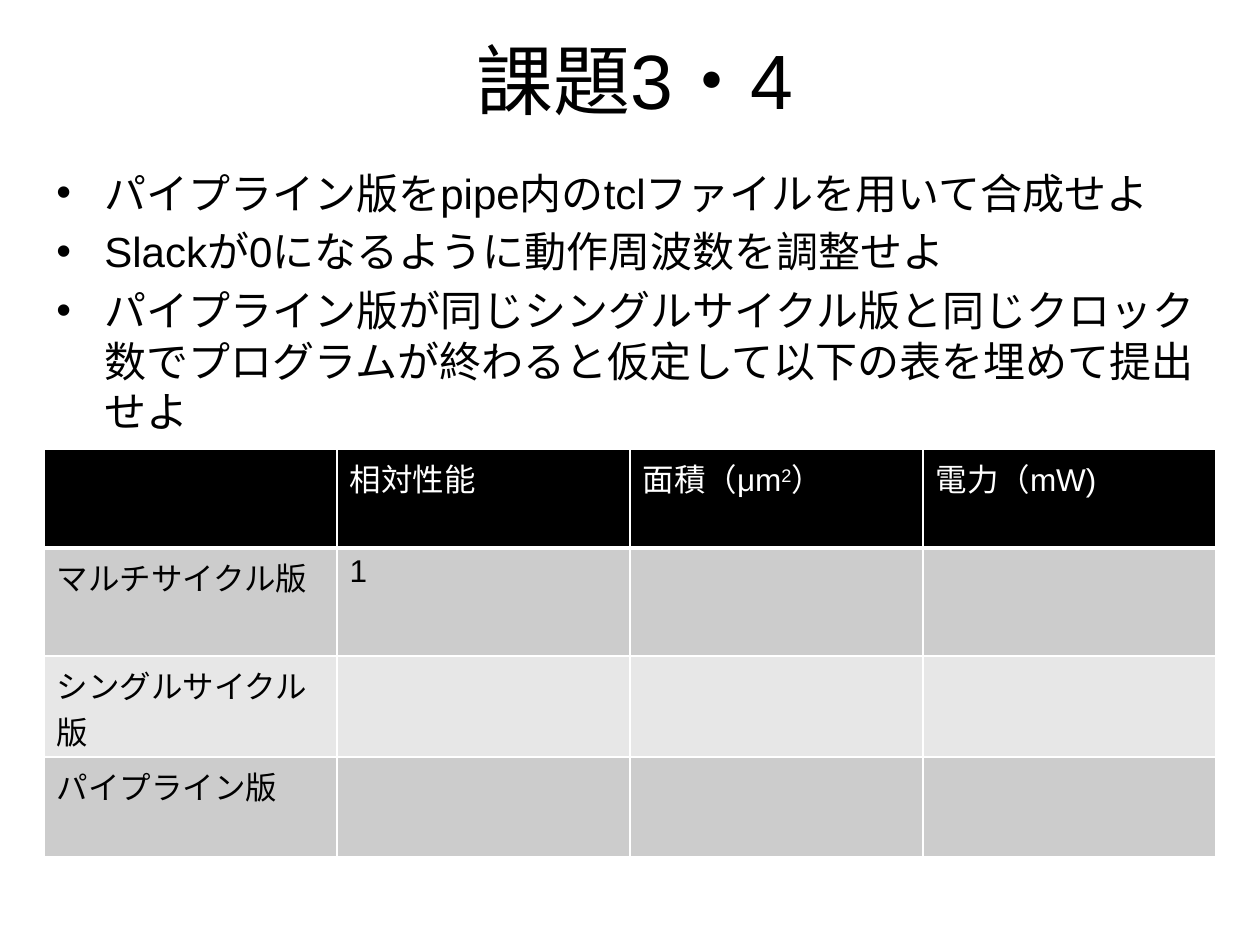
"""Build the assignment 3 and 4 slide with its results table."""
from lxml import etree
from pptx import Presentation
from pptx import util as u
from pptx.dml.color import RGBColor
from pptx.enum import text
from pptx.oxml.ns import qn

PX = 914400 // 126
FONT = "Arial"
BLACK = RGBColor(0, 0, 0)
WHITE = RGBColor(255, 255, 255)
DARK_BAND = RGBColor(0xCC, 0xCC, 0xCC)
LIGHT_BAND = RGBColor(0xE7, 0xE7, 0xE7)

TITLE = "課題3・4"
TASKS = [
    "パイプライン版をpipe内のtclファイルを用いて合成せよ",
    "Slackが0になるように動作周波数を調整せよ",
    "パイプライン版が同じシングルサイクル版と同じクロック数で"
    "プログラムが終わると仮定して以下の表を埋めて提出せよ",
]
RESULTS = [
    ["", "相対性能", ("面積（μm", "2", "）"), "電力（mW)"],
    ["マルチサイクル版", "1", "", ""],
    ["シングルサイクル版", "", "", ""],
    ["パイプライン版", "", "", ""],
]
ROW_FILLS = [BLACK, DARK_BAND, LIGHT_BAND, DARK_BAND]
ROW_HEIGHTS = [99, 108, 101, 100]
COLUMN_WIDTH = 293
TITLE_BOX = (68, 0, 1134, 158)
TASK_BOX = (44, 161, 1186, 252)
TABLE_CORNER = (44, 449)
INDENT = 48


def px(*lengths):
    return [u.Emu(length * PX) for length in lengths]


def style(paragraph, size, color=BLACK):
    font = paragraph.font
    font.name, font.size, font.bold = FONT, u.Pt(size), False
    font.color.rgb = color


def add_text_frame(slide, box):
    frame = slide.shapes.add_textbox(*px(*box)).text_frame
    frame.word_wrap = True
    return frame


def add_bullet(paragraph):
    properties = paragraph._p.get_or_add_pPr()
    indent = INDENT * PX
    properties.set("marL", str(indent))
    properties.set("indent", str(-indent))
    etree.SubElement(properties, qn("a:buFont"), typeface=FONT)
    etree.SubElement(properties, qn("a:buChar"), char="•")


def add_borders(cell, bottom):
    properties = cell._tc.get_or_add_tcPr()
    for side, points in (("L", 1), ("R", 1), ("T", 1), ("B", bottom)):
        line = etree.SubElement(properties, qn("a:ln" + side), w=str(u.Pt(points)))
        fill = etree.SubElement(line, qn("a:solidFill"))
        etree.SubElement(fill, qn("a:srgbClr"), val=str(WHITE))


def fill_cell(cell, content, fill, is_header):
    add_borders(cell, 3 if is_header else 1)
    cell.fill.solid()
    cell.fill.fore_color.rgb = fill
    paragraph = cell.text_frame.paragraphs[0]
    style(paragraph, 18, WHITE if is_header else BLACK)
    if isinstance(content, str):
        content = (content,)
    for index, part in enumerate(content):
        if part:
            run = paragraph.add_run()
            run.text = part
            if index == 1:
                run._r.get_or_add_rPr().set("baseline", "30000")


def main():
    presentation = Presentation()
    presentation.slide_width, presentation.slide_height = px(1260, 945)
    slide = presentation.slides.add_slide(presentation.slide_layouts[6])

    frame = add_text_frame(slide, TITLE_BOX)
    frame.vertical_anchor = text.MSO_ANCHOR.MIDDLE
    paragraph = frame.paragraphs[0]
    paragraph.text = TITLE
    paragraph.alignment = text.PP_ALIGN.CENTER
    style(paragraph, 44)

    frame = add_text_frame(slide, TASK_BOX)
    for index, task in enumerate(TASKS):
        paragraph = frame.add_paragraph() if index else frame.paragraphs[0]
        paragraph.text = task
        paragraph.space_before = u.Pt(4.8)
        add_bullet(paragraph)
        style(paragraph, 24)

    columns = len(RESULTS[0])
    size = (COLUMN_WIDTH * columns, sum(ROW_HEIGHTS))
    table = slide.shapes.add_table(
        len(RESULTS), columns, *px(*TABLE_CORNER, *size)).table
    for column in table.columns:
        column.width = u.Emu(COLUMN_WIDTH * PX)
    for index, contents in enumerate(RESULTS):
        table.rows[index].height = u.Emu(ROW_HEIGHTS[index] * PX)
        for cell, content in zip(table.rows[index].cells, contents):
            fill_cell(cell, content, ROW_FILLS[index], index == 0)

    presentation.save("out.pptx")


if __name__ == "__main__":
    main()
